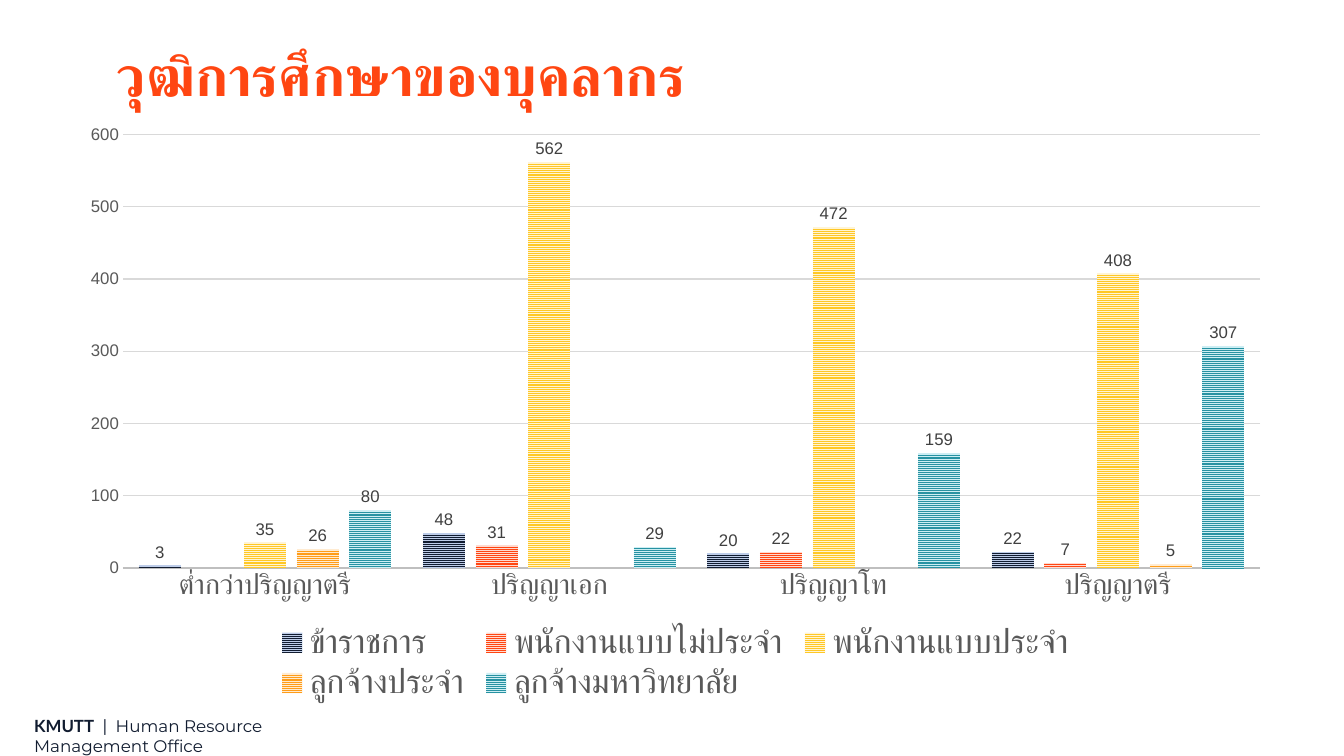
from pptx import Presentation
from pptx import util as u
from pptx.chart import data as chart_data
from pptx.dml.color import RGBColor
from pptx.enum import chart as ch
from pptx.enum import dml, text

THEME = {
    "title": {"name": "Calibri", "size": 40, "color": "FF4612", "bold": True},
    "footer_name": {"name": "Lato", "size": 12, "color": "111C30", "bold": True},
    "footer_bar": {"name": "Lato", "size": 12, "color": "111C30", "bold": False},
    "footer_office": {"name": "Montserrat", "size": 12, "color": "111C30", "bold": False},
    "chart": {"name": "Arial", "size": 10, "color": "000000"},
    "categories": {"name": "Arial", "size": 20, "color": "595959", "bold": False},
    "scale": {"name": "Arial", "size": 12, "color": "595959", "bold": False},
    "legend": {"name": "Arial", "size": 24, "color": "595959", "bold": False},
    "labels": {"name": "Arial", "size": 12, "color": "404040", "bold": False},
    "axis_line": "BFBFBF",
    "grid_line": "D9D9D9",
}

EDUCATION_LEVELS = ["ต่ำกว่าปริญญาตรี", "ปริญญาเอก", "ปริญญาโท", "ปริญญาตรี"]
# staff group, head count per level, stripe colour, colour between stripes
STAFF_GROUPS = [
    ("ข้าราชการ", [3, 48, 20, 22], "111C30", "BDCCE8"),
    ("พนักงานแบบไม่ประจำ", [None, 31, 22, 7], "FF4612", "FFDAD0"),
    ("พนักงานแบบประจำ", [35, 562, 472, 408], "FFC826", "FFF4D4"),
    ("ลูกจ้างประจำ", [26, None, None, 5], "FF9D19", "FFEBD1"),
    ("ลูกจ้างมหาวิทยาลัย", [80, 29, 159, 307], "2792A2", "CDEEF3"),
]


def set_font(font, style):
    for key, value in THEME[style].items():
        if key == "color":
            font.color.rgb = RGBColor.from_string(value)
        else:
            setattr(font, key, u.Pt(value) if key == "size" else value)


def set_line(line, color, width):
    line.color.rgb = RGBColor.from_string(THEME[color])
    line.width = u.Pt(width)


deck = Presentation()
deck.slide_width, deck.slide_height = u.Inches(13.33), u.Inches(7.5)
slide = deck.slides.add_slide(deck.slide_layouts[6])

# Footer and title
footer = slide.shapes.add_textbox(*map(u.Inches, (0.24, 7.05, 3.62, 0.3))).text_frame
footer.word_wrap = True
for words, style in [
    ("KMUTT", "footer_name"),
    ("  |  ", "footer_bar"),
    ("Human Resource Management Office", "footer_office"),
]:
    run = footer.paragraphs[0].add_run()
    run.text = words
    set_font(run.font, style)

title = slide.shapes.add_textbox(*map(u.Inches, (1.06, 0.38, 5.88, 0.75))).text_frame
title.word_wrap = True
title.vertical_anchor = text.MSO_ANCHOR.BOTTOM
heading = title.paragraphs[0]
heading.line_spacing = 0.9
heading_run = heading.add_run()
heading_run.text = "วุฒิการศึกษาของบุคลากร"
set_font(heading_run.font, "title")

# Head counts by education level
head_counts = chart_data.CategoryChartData()
head_counts.categories = EDUCATION_LEVELS
for group, counts, _, _ in STAFF_GROUPS:
    head_counts.add_series(group, counts)
chart = slide.shapes.add_chart(
    ch.XL_CHART_TYPE.COLUMN_CLUSTERED,
    *map(u.Inches, (0.66, 1.13, 12.08, 5.88)),
    head_counts,
).chart
set_font(chart.font, "chart")
chart.has_title = False

chart.has_legend = True
chart.legend.position = ch.XL_LEGEND_POSITION.BOTTOM
chart.legend.include_in_layout = False
set_font(chart.legend.font, "legend")

levels, scale = chart.category_axis, chart.value_axis
for axis, style in [(levels, "categories"), (scale, "scale")]:
    axis.major_tick_mark = axis.minor_tick_mark = ch.XL_TICK_MARK.NONE
    set_font(axis.tick_labels.font, style)
set_line(levels.format.line, "axis_line", 1.5)
scale.format.line.fill.background()
scale.minimum_scale, scale.maximum_scale, scale.major_unit = 0, 600, 100
scale.has_major_gridlines = True
set_line(scale.major_gridlines.format.line, "grid_line", 0.75)

columns = chart.plots[0]
columns.gap_width, columns.overlap = 75, -25
columns.vary_by_categories = False
for series, (_, _, stripe, between) in zip(columns.series, STAFF_GROUPS):
    fill = series.format.fill
    fill.patterned()
    fill.pattern = dml.MSO_PATTERN.NARROW_HORIZONTAL
    fill.fore_color.rgb = RGBColor.from_string(stripe)
    fill.back_color.rgb = RGBColor.from_string(between)
    series.format.line.fill.background()
    series.invert_if_negative = False
    labels = series.data_labels
    labels.show_value = True
    labels.position = ch.XL_LABEL_POSITION.OUTSIDE_END
    set_font(labels.font, "labels")

deck.save("out.pptx")
